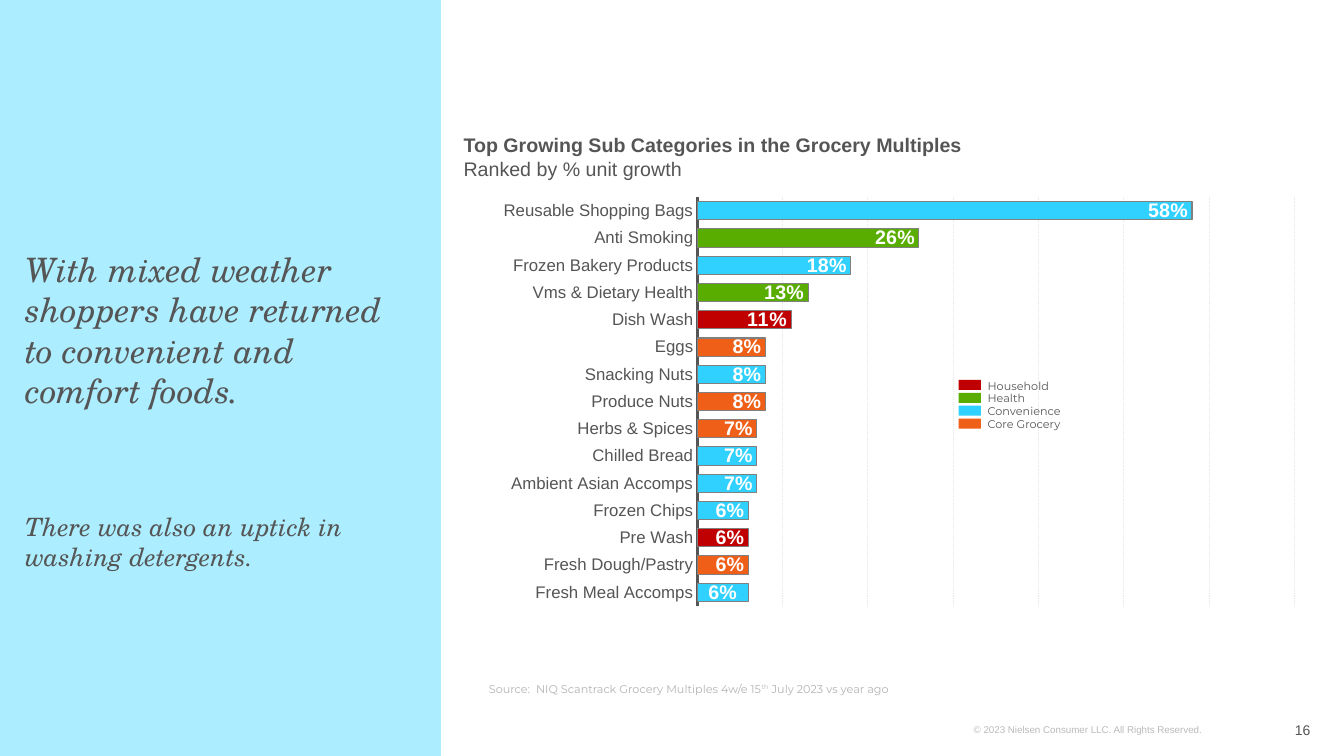
from lxml import etree
from pptx import Presentation
from pptx import util as u
from pptx.chart import data as chart_data
from pptx.dml import color
from pptx.enum import chart as charts, dml, shapes, text
from pptx.oxml import ns

PANEL = color.RGBColor(0xAC, 0xED, 0xFF)
INK = color.RGBColor(0x55, 0x55, 0x55)
SOURCE_GREY = color.RGBColor(0xB3, 0xB3, 0xB3)
FOOTER_GREY = color.RGBColor(0xBB, 0xBB, 0xBB)
GRID = color.RGBColor(0xE6, 0xE6, 0xE6)
BAR_EDGE = color.RGBColor(0x80, 0x80, 0x80)
WHITE = color.RGBColor(0xFF, 0xFF, 0xFF)
GROUPS = {
    "Household": color.RGBColor(0xC0, 0x00, 0x00),
    "Health": color.RGBColor(0x59, 0xAD, 0x00),
    "Convenience": color.RGBColor(0x30, 0xD1, 0xFF),
    "Core Grocery": color.RGBColor(0xEF, 0x5F, 0x17),
}
SUB_CATEGORIES = [
    ("Reusable Shopping Bags", 0.58, "Convenience"),
    ("Anti Smoking", 0.26, "Health"),
    ("Frozen Bakery Products", 0.18, "Convenience"),
    ("Vms & Dietary Health", 0.13, "Health"),
    ("Dish Wash", 0.11, "Household"),
    ("Eggs", 0.08, "Core Grocery"),
    ("Snacking Nuts", 0.08, "Convenience"),
    ("Produce Nuts", 0.08, "Core Grocery"),
    ("Herbs & Spices", 0.07, "Core Grocery"),
    ("Chilled Bread", 0.07, "Convenience"),
    ("Ambient Asian Accomps", 0.07, "Convenience"),
    ("Frozen Chips", 0.06, "Convenience"),
    ("Pre Wash", 0.06, "Household"),
    ("Fresh Dough/Pastry", 0.06, "Core Grocery"),
    ("Fresh Meal Accomps", 0.06, "Convenience"),
]


class SlideBuilder:
    body_font = "Arial"
    small_font = "Montserrat"
    headline_font = "TeX Gyre Schola"

    def __init__(self, slide):
        self.slide = slide

    def style(self, font, size, ink=INK, name=None, bold=False, italic=False):
        font.name = name or self.body_font
        font.size = u.Pt(size)
        font.color.rgb = ink
        font.bold = bold
        font.italic = italic

    def rectangle(self, box, fill):
        shape = self.slide.shapes.add_shape(
            shapes.MSO_SHAPE.RECTANGLE, *map(u.Pt, box))
        shape.shadow.inherit = False
        shape.fill.solid()
        shape.fill.fore_color.rgb = fill
        shape.line.fill.background()

    def text(self, box, paragraphs, inset=0, anchor=text.MSO_ANCHOR.TOP,
             align=text.PP_ALIGN.LEFT, gap=0):
        frame = self.slide.shapes.add_textbox(*map(u.Pt, box)).text_frame
        frame.word_wrap = True
        frame.vertical_anchor = anchor
        frame.margin_left = frame.margin_right = u.Pt(inset)
        for index, runs in enumerate(paragraphs):
            paragraph = frame.add_paragraph() if index else frame.paragraphs[0]
            paragraph.alignment = align
            if index:
                paragraph.space_before = u.Pt(gap)
            for words, style in runs:
                run = paragraph.add_run()
                run.text = words
                baseline = style.get("baseline")
                self.style(run.font, **{key: value for key, value in style.items()
                                        if key != "baseline"})
                if baseline:
                    run._r.get_or_add_rPr().set("baseline", baseline)

    def legend(self, left, top, pitch):
        for row, (group, fill) in enumerate(GROUPS.items()):
            y = top + row * pitch
            self.rectangle((left, y, 16, 7.2), fill)
            self.text((left + 13.7, y - 4.3, 91.5, 17),
                      [[(group, {"size": 8, "name": self.small_font})]], inset=7.2)

    def bar_chart(self, box, rows, plot_area):
        data = chart_data.CategoryChartData(number_format="0%")
        data.categories = [name for name, _, _ in rows]
        data.add_series("Series 1", [value for _, value, _ in rows])
        chart = self.slide.shapes.add_chart(
            charts.XL_CHART_TYPE.BAR_STACKED, *map(u.Pt, box), data).chart
        chart.has_legend = False
        chart.has_title = False
        self.style(chart.font, 10)

        category_axis = chart.category_axis
        category_axis.reverse_order = True
        category_axis.major_tick_mark = charts.XL_TICK_MARK.NONE
        category_axis.format.line.color.rgb = INK
        category_axis.format.line.width = u.Pt(2)
        self.style(category_axis.tick_labels.font, 12)

        value_axis = chart.value_axis
        value_axis.minimum_scale = 0
        value_axis.maximum_scale = 0.7
        value_axis.major_unit = 0.1
        value_axis.has_major_gridlines = True
        grid_line = value_axis.major_gridlines.format.line
        grid_line.color.rgb = GRID
        grid_line.width = u.Pt(0.75)
        grid_line.dash_style = dml.MSO_LINE.ROUND_DOT
        value_axis.visible = False

        plot = chart.plots[0]
        plot.gap_width = 50
        plot.overlap = 100
        plot.vary_by_categories = False
        series = plot.series[0]
        series.invert_if_negative = False
        for index, (_, _, group) in enumerate(rows):
            bar = series.points[index].format
            bar.fill.solid()
            bar.fill.fore_color.rgb = GROUPS[group]
            bar.line.color.rgb = BAR_EDGE
            bar.line.width = u.Pt(0.75)

        labels = series.data_labels
        labels.show_value = True
        labels.number_format = "0%"
        labels.number_format_is_linked = False
        labels.position = charts.XL_LABEL_POSITION.INSIDE_END
        self.style(labels.font, 14, WHITE, bold=True)
        last_label = series.points[len(rows) - 1].data_label
        self.style(last_label.font, 14, WHITE, bold=True)
        last_label.position = charts.XL_LABEL_POSITION.CENTER
        self.place_plot(chart, plot_area)

    def place_plot(self, chart, plot_area):
        area = chart._chartSpace.chart.plotArea
        for layout in area.findall(ns.qn("c:layout")):
            area.remove(layout)
        layout = etree.Element(ns.qn("c:layout"))
        area.insert(0, layout)
        manual = etree.SubElement(layout, ns.qn("c:manualLayout"))
        settings = [("layoutTarget", "inner"), ("xMode", "edge"), ("yMode", "edge")]
        settings += zip("xywh", map(str, plot_area))
        for tag, value in settings:
            etree.SubElement(manual, ns.qn("c:" + tag)).set("val", value)


def main():
    presentation = Presentation()
    presentation.slide_width = u.Pt(960)
    presentation.slide_height = u.Pt(540)
    slide = presentation.slides.add_slide(presentation.slide_layouts[6])
    builder = SlideBuilder(slide)
    bottom, middle = text.MSO_ANCHOR.BOTTOM, text.MSO_ANCHOR.MIDDLE

    builder.rectangle((0, 0, 315, 540), PANEL)
    builder.text((695.5, 513.4, 204.5, 16), [[
        ("© 2023 Nielsen Consumer LLC. All Rights Reserved.",
         {"size": 7, "ink": FOOTER_GREY})]])
    builder.bar_chart((337.7, 131.8, 598.3, 313.9), SUB_CATEGORIES,
                      (0.268, 0.029, 0.713, 0.93))
    builder.text((864.7, 506.9, 71.3, 28.8), [[("16", {"size": 10})]],
                 anchor=middle, align=text.PP_ALIGN.RIGHT)

    headline = {"name": builder.headline_font, "italic": True}
    builder.text((18, 223.9, 275.8, 187.9), [
        [("With mixed weather shoppers have returned to convenient and comfort foods.",
          {"size": 24, **headline})],
        [("There was also an uptick in washing detergents.",
          {"size": 18, **headline})],
    ], anchor=bottom, gap=72)

    source = {"size": 8, "ink": SOURCE_GREY, "name": builder.small_font}
    builder.text((349.2, 471.6, 586.8, 28.8), [[
        ("Source:  NIQ Scantrack Grocery Multiples 4w/e 15", source),
        ("th", {**source, "baseline": "30000"}),
        (" July 2023 vs year ago", source)]], anchor=bottom)

    builder.text((324, 91.4, 598.3, 41), [
        [("Top Growing Sub Categories in the Grocery Multiples",
          {"size": 14, "bold": True})],
        [("Ranked by % unit growth", {"size": 14})]], inset=7.2)
    builder.legend(684.7, 271.4, 9.2)
    presentation.save("out.pptx")


if __name__ == "__main__":
    main()
